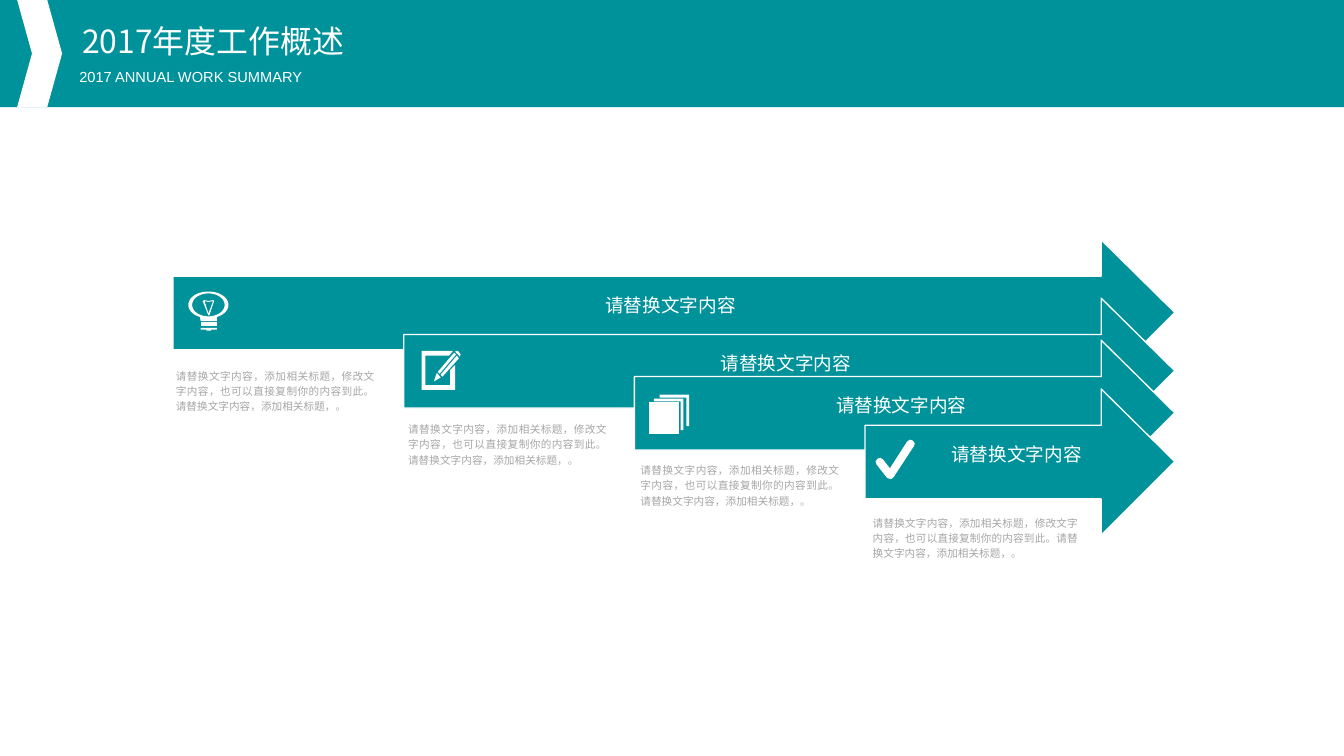
import dataclasses
import math

import lxml.etree
import pptx
import pptx.dml.color
import pptx.enum.shapes
import pptx.enum.text
import pptx.oxml.ns
import pptx.util

Inches = pptx.util.Inches
Align = pptx.enum.text.PP_ALIGN
Anchor = pptx.enum.text.MSO_ANCHOR
Preset = pptx.enum.shapes.MSO_SHAPE


@dataclasses.dataclass(frozen=True)
class Theme:
    teal: str = "00929A"
    white: str = "FFFFFF"
    gray: str = "A6A6A6"
    title_size: int = 24
    subtitle_size: int = 11
    label_size: int = 14
    note_size: int = 8
    title_font: str = "Noto Sans CJK SC"
    subtitle_font: str = "Arial"
    body_font: str = "Roboto Condensed"
    asian_font: str = "Noto Sans CJK SC"


def write_text(frame, text, *, size, font, asian_font, color, align=Align.LEFT,
               anchor=Anchor.TOP, spacing=1.0, insets=(0, 0, 0, 0)):
    """Fill a text frame with one formatted paragraph; insets run left, top, right, bottom."""
    frame.word_wrap = True
    frame.vertical_anchor = anchor
    (frame.margin_left, frame.margin_top,
     frame.margin_right, frame.margin_bottom) = map(Inches, insets)
    paragraph = frame.paragraphs[0]
    paragraph.alignment = align
    paragraph.line_spacing = spacing
    run = paragraph.add_run()
    run.text = text
    run.font.size = pptx.util.Pt(size)
    run.font.name = font
    run.font.color.rgb = pptx.dml.color.RGBColor.from_string(color)
    properties = run.font._element
    east_asian = lxml.etree.SubElement(properties, pptx.oxml.ns.qn("a:ea"))
    east_asian.set("typeface", asian_font)


def ellipse_arc(center, radii, start, end, steps=48):
    """Points along an ellipse; degrees run clockwise from the right."""
    angles = [math.radians(start + (end - start) * step / steps) for step in range(steps + 1)]
    return [(center[0] + radii[0] * math.cos(angle), center[1] + radii[1] * math.sin(angle))
            for angle in angles]


def rectangle(left, top, width, height):
    return [(left, top), (left + width, top), (left + width, top + height), (left, top + height)]


@dataclasses.dataclass
class SlideBuilder:
    slide: object
    theme: Theme

    def paint(self, shape, fill, line=None):
        shape.shadow.inherit = False
        shape.fill.solid()
        shape.fill.fore_color.rgb = pptx.dml.color.RGBColor.from_string(fill)
        if line:
            shape.line.color.rgb = pptx.dml.color.RGBColor.from_string(line)
            shape.line.width = pptx.util.Pt(1)
        else:
            shape.line.fill.background()

    def preset(self, kind, left, top, width, height, fill):
        shape = self.slide.shapes.add_shape(kind, *map(Inches, (left, top, width, height)))
        self.paint(shape, fill)
        return shape

    def outline(self, shapes, contours, fill, line=None):
        """Draw closed contours as one freeform; inner contours become holes."""
        first, *others = [[(Inches(x), Inches(y)) for x, y in contour] for contour in contours]
        builder = shapes.build_freeform(*first[0])
        builder.add_line_segments(first[1:], close=True)
        for contour in others:
            builder.move_to(*contour[0])
            builder.add_line_segments(contour[1:], close=True)
        shape = builder.convert_to_shape()
        self.paint(shape, fill, line)
        return shape

    def icon(self, parts):
        group = self.slide.shapes.add_group_shape()
        for contours in parts:
            self.outline(group.shapes, contours, self.theme.white)

    def text(self, text, left, top, width, height, **style):
        box = self.slide.shapes.add_textbox(*map(Inches, (left, top, width, height)))
        write_text(box.text_frame, text, asian_font=self.theme.asian_font, **style)
        box.text_frame.auto_size = pptx.enum.text.MSO_AUTO_SIZE.SHAPE_TO_FIT_TEXT

    def header(self, title, subtitle):
        theme = self.theme
        self.preset(Preset.RECTANGLE, 0, 0, 14.06, 1.12, theme.teal)
        chevron = self.preset(Preset.CHEVRON, 0.18, 0, 0.47, 1.12, theme.white)
        chevron.adjustments[0] = 0.33
        self.text(title, 0.86, 0.27, 3.45, 0.36, size=theme.title_size,
                  font=theme.title_font, color=theme.white, spacing=0.9)
        self.text(subtitle, 0.83, 0.73, 3.48, 0.17, size=theme.subtitle_size,
                  font=theme.subtitle_font, color=theme.white, spacing=0.9)

    def arrow(self, label, left, top):
        neck, tip = 11.52, 12.29
        shaft_top, middle, shaft_bottom, bottom = (top + drop for drop in (0.38, 0.76, 1.15, 1.53))
        points = [(left, shaft_top), (neck, shaft_top), (neck, top), (tip, middle),
                  (neck, bottom), (neck, shaft_bottom), (left, shaft_bottom)]
        theme = self.theme
        shape = self.outline(self.slide.shapes, [points], theme.teal, theme.white)
        write_text(shape.text_frame, label, size=theme.label_size, font=theme.body_font,
                   asian_font=theme.asian_font, color=theme.white, align=Align.CENTER,
                   anchor=Anchor.MIDDLE, spacing=1.2, insets=(0.59, 0.41, 0.66, 0.62))

    def note(self, text, left, top, width):
        theme = self.theme
        self.text(text, left, top, width, 0.57, size=theme.note_size, font=theme.body_font,
                  color=theme.gray, align=Align.JUSTIFY, spacing=1.2,
                  insets=(0.11, 0.05, 0.11, 0.05))


def bulb_icon():
    glass = ellipse_arc((2.18, 3.19), (0.21, 0.14), 115, 425) + [(2.27, 3.36), (2.1, 3.36)]
    hollow = ellipse_arc((2.18, 3.19), (0.17, 0.12), 0, 360)
    filament = [(2.12, 3.15), (2.14, 3.14), (2.18, 3.15), (2.23, 3.14),
                (2.24, 3.15), (2.19, 3.3), (2.18, 3.3)]
    filament_gap = [(2.18, 3.28), (2.14, 3.15), (2.18, 3.16), (2.23, 3.15)]
    cap = [(2.1, 3.43), (2.27, 3.43), (2.27, 3.45), (2.21, 3.45),
           (2.21, 3.46), (2.16, 3.46), (2.16, 3.45), (2.1, 3.45)]
    return [[glass, hollow], [rectangle(2.1, 3.37, 0.17, 0.04)], [cap], [filament, filament_gap]]


def pencil_icon():
    nib = [(4.61, 3.95), (4.57, 3.9), (4.54, 3.99)]
    upper_side = [(4.75, 3.69), (4.58, 3.89), (4.6, 3.91), (4.77, 3.71)]
    lower_side = [(4.61, 3.92), (4.63, 3.94), (4.8, 3.75), (4.78, 3.72)]
    eraser = [(4.76, 3.68), (4.78, 3.67), (4.8, 3.68), (4.82, 3.71), (4.81, 3.73)]
    sheet = [(4.71, 4.03), (4.45, 4.03), (4.45, 3.72), (4.7, 3.72), (4.74, 3.67), (4.41, 3.67),
             (4.41, 4.08), (4.76, 4.08), (4.76, 3.82), (4.71, 3.87)]
    return [[part] for part in (nib, upper_side, lower_side, eraser, sheet)]


def pages_icon():
    width, height, edge = 0.31, 0.33, 0.03
    back_pages = [
        [(left, top), (left + width, top), (left + width, top + height),
         (left + width - edge, top + height), (left + width - edge, top + edge), (left, top + edge)]
        for left, top in ((6.84, 4.17), (6.9, 4.13))]
    return [[page] for page in (*back_pages, rectangle(6.79, 4.21, width, height))]


def check_icon():
    return [[[(9.31, 5.01), (9.28, 5), (9.17, 4.86), (9.16, 4.83), (9.18, 4.8), (9.21, 4.79),
              (9.24, 4.81), (9.31, 4.9), (9.49, 4.62), (9.52, 4.6), (9.55, 4.61),
              (9.57, 4.64), (9.56, 4.67), (9.35, 4.99), (9.33, 5.01)]]]


def main():
    presentation = pptx.Presentation()
    presentation.slide_width = Inches(14.06)
    presentation.slide_height = Inches(7.91)
    builder = SlideBuilder(presentation.slides.add_slide(presentation.slide_layouts[6]), Theme())

    builder.header("2017年度工作概述", "2017 ANNUAL WORK SUMMARY")
    note = "请替换文字内容，添加相关标题，修改文字内容，也可以直接复制你的内容到此。请替换文字内容，添加相关标题，。"
    steps = [(2.51, 3.79, 2.3), (3.12, 4.35, 2.3), (3.56, 4.78, 2.3), (4.07, 5.33, 2.37)]
    for index, (arrow_top, note_top, note_width) in enumerate(steps):
        builder.note(note, 1.73 + 2.43 * index, note_top, note_width)
        builder.arrow("请替换文字内容", 1.81 + 7.24 * index / 3, arrow_top)
    for parts in (bulb_icon(), pencil_icon(), pages_icon(), check_icon()):
        builder.icon(parts)

    presentation.save("out.pptx")


if __name__ == "__main__":
    main()
